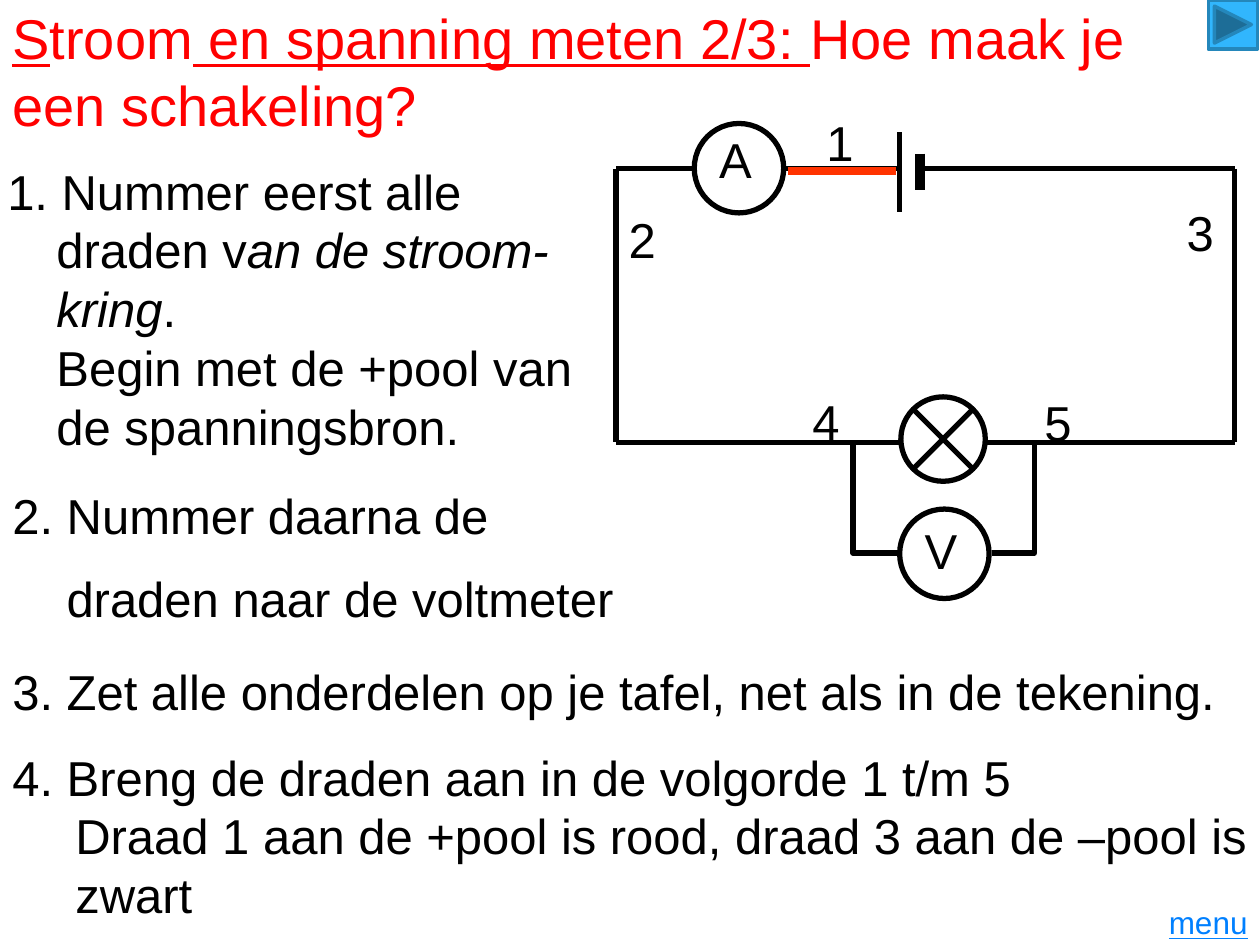
from lxml.etree import SubElement
from pptx import Presentation
from pptx.dml.color import RGBColor
from pptx.enum.shapes import MSO_CONNECTOR, MSO_SHAPE
from pptx.enum.text import MSO_ANCHOR, PP_ALIGN
from pptx.oxml.ns import qn
from pptx.util import Inches, Pt

COLORS = {
    "ink": "000000",
    "paper": "FFFFFF",
    "title": "FF0000",
    "red_wire": "FF3300",
    "link": "0080FF",
    "button": "31B6FD",
    "button_line": "2487BB",
}


def rgb(name):
    return RGBColor.from_string(COLORS[name])


def add_line(s, x1, y1, x2, y2, color="ink", width=3):
    line = s.shapes.add_connector(
        MSO_CONNECTOR.STRAIGHT, Inches(x1), Inches(y1), Inches(x2), Inches(y2))
    line.line.color.rgb = rgb(color)
    line.line.width = Pt(width)
    SubElement(line._element.spPr, qn("a:effectLst"))


def add_lead(s, points):
    start, *rest = [(Inches(x), Inches(y)) for x, y in points]
    builder = s.shapes.build_freeform(*start)
    builder.add_line_segments(rest, close=False)
    sp = builder.convert_to_shape()
    sp.shadow.inherit = False
    sp.fill.background()
    sp.line.color.rgb = rgb("ink")
    sp.line.width = Pt(3)


def add_shape(s, kind, x, y, size, fill="paper", line="ink", width=3):
    sp = s.shapes.add_shape(kind, Inches(x), Inches(y), Inches(size), Inches(size))
    sp.shadow.inherit = False
    sp.fill.solid()
    sp.fill.fore_color.rgb = rgb(fill)
    sp.line.color.rgb = rgb(line)
    sp.line.width = Pt(width)


def add_text(s, x, y, w, h, paragraphs, size=28, color="ink",
             anchor=MSO_ANCHOR.TOP, align=PP_ALIGN.LEFT):
    tf = s.shapes.add_textbox(Inches(x), Inches(y), Inches(w), Inches(h)).text_frame
    tf.word_wrap = True
    tf.vertical_anchor = anchor
    for i, (margin, indent, runs) in enumerate(paragraphs):
        p = tf.paragraphs[0] if i == 0 else tf.add_paragraph()
        p.alignment = align
        if i:
            p.space_before = Pt(size / 2)
        if margin:
            pPr = p._p.get_or_add_pPr()
            pPr.set("marL", str(Inches(margin)))
            pPr.set("indent", str(Inches(indent)))
        for text, style in runs:
            for j, part in enumerate(text.split("\n")):
                if j:
                    p.add_line_break()
                if part:
                    r = p.add_run()
                    r.text = part
                    if style == "u":
                        r.font.underline = True
                    if style == "i":
                        r.font.italic = True
        p.font.name = "Arial"
        p.font.size = Pt(size)
        p.font.color.rgb = rgb(color)


def add_circuit(s, x, y, w, h):
    right, bottom = x + w, y + h
    plus, minus = x + 2.25, x + 2.41
    wires = [
        (plus, y, x, y),
        (x, y, x, bottom),
        (x, bottom, x + 2.26, bottom),
        (x + 2.93, bottom, right, bottom),
        (minus, y, right, y),
        (right, y, right, bottom),
        (plus, y - 0.29, plus, y + 0.34),
    ]
    for wire in wires:
        add_line(s, *wire)
    add_line(s, minus, y - 0.12, minus, y + 0.17, width=6)

    add_shape(s, MSO_SHAPE.FLOWCHART_SUMMING_JUNCTION, x + 2.26, bottom - 0.36, 0.67)
    add_shape(s, MSO_SHAPE.OVAL, x + 0.62, y - 0.36, 0.71)
    add_shape(s, MSO_SHAPE.OVAL, x + 2.25, bottom + 0.53, 0.71)
    meter_y = bottom + 0.88
    for inner, outer in [(2.26, 1.88), (2.98, 3.32)]:
        add_lead(s, [(x + inner, meter_y), (x + outer, meter_y), (x + outer, bottom)])
    add_line(s, x + 1.36, y + 0.02, x + 2.22, y + 0.02, "red_wire", 4.5)

    labels = [
        ("A", 0.72, -0.36), ("V", 2.35, 2.74), ("1", 1.57, -0.5), ("2", 0, 0.27),
        ("3", 4.43, 0.22), ("4", 1.46, 1.72), ("5", 3.3, 1.73),
    ]
    for text, dx, dy in labels:
        add_text(s, x + dx, y + dy, 0.55 if text in "AV" else 0.47, 0.57,
                 [(0, 0, [(text, "")])])


def add_title(s, x, y, w, h):
    runs = [("S", "u"), ("troom", ""), (" en spanning meten 2/3: ", "u"),
            ("Hoe maak je \neen schakeling?", "")]
    add_text(s, x, y, w, h, [(0, 0, runs)], 32, "title", MSO_ANCHOR.MIDDLE)


def add_steps(s, x, y, w):
    first = [("1. Nummer eerst alle\ndraden v", ""), ("an de stroom-\nkring", "i"),
             (".\nBegin met de +pool van\nde spanningsbron.", "")]
    third = "3. Zet alle onderdelen op je tafel, net als in de tekening."
    fourth = ("4. Breng de draden aan in de volgorde 1 t/m 5\n"
              "Draad 1 aan de +pool is rood, draad 3 aan de –pool is zwart")
    add_text(s, x - 0.04, y, w, 2.46, [(0.39, -0.39, first)])
    add_text(s, x, y + 2.57, w, 1.28, [
        (0.5, -0.5, [("2. Nummer daarna de", "")]),
        (0.43, 0, [("draden naar de voltmeter", "")]),
    ])
    add_text(s, x, y + 3.97, w, 0.57, [(0.5, -0.5, [(third, "")])])
    add_text(s, x, y + 4.65, w, 1.51, [(0.5, -0.5, [(fourth, "")])])


def add_navigation(s, x, y, w, h):
    add_text(s, x + w - 1.06, y + h - 0.36, 1.06, 0.36, [(0, 0, [("menu", "u")])],
             18, "link", MSO_ANCHOR.MIDDLE, PP_ALIGN.RIGHT)
    add_shape(s, MSO_SHAPE.ACTION_BUTTON_FORWARD_OR_NEXT, x + w - 0.41, y, 0.39,
              "button", "button_line", 2)


def main():
    prs = Presentation()
    prs.slide_width, prs.slide_height = Inches(10), Inches(7.5)
    s = prs.slides.add_slide(prs.slide_layouts[6])
    add_circuit(s, 4.89, 1.34, 4.91, 2.17)
    add_title(s, 0, -0.03, 10, 1.18)
    add_steps(s, 0, 1.23, 10)
    add_navigation(s, 0, 0, 10, 7.5)
    prs.save("out.pptx")


if __name__ == "__main__":
    main()
